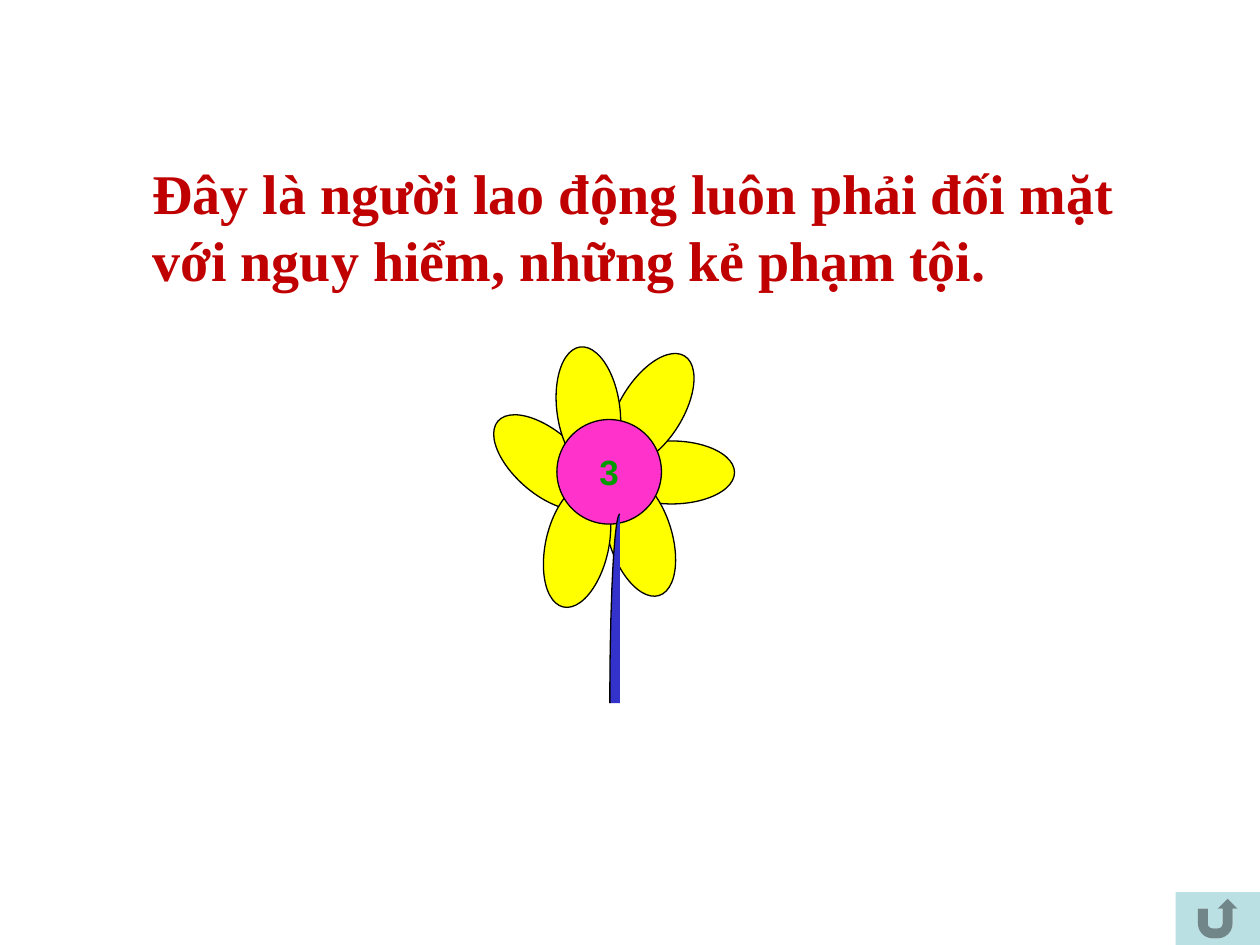
import math

import pptx
import pptx.dml.color
import pptx.enum.shapes
import pptx.enum.text
import pptx.util
from pptx.util import Inches

RGBColor = pptx.dml.color.RGBColor
MSO_SHAPE = pptx.enum.shapes.MSO_SHAPE

BLACK = RGBColor(0x00, 0x00, 0x00)
CLUE_RED = RGBColor(0xC0, 0x00, 0x00)
PETAL_YELLOW = RGBColor(0xFF, 0xFF, 0x00)
CENTRE_PINK = RGBColor(0xFF, 0x33, 0xCC)
NUMBER_GREEN = RGBColor(0x00, 0x99, 0x00)
STEM_BLUE = RGBColor(0x33, 0x33, 0xCC)
BUTTON_BLUE = RGBColor(0xBB, 0xE0, 0xE3)


def paint(shape, fill=None, line=None):
    shape.shadow.inherit = False
    if fill is None:
        shape.fill.background()
    else:
        shape.fill.solid()
        shape.fill.fore_color.rgb = fill
    if line is None:
        shape.line.fill.background()
    else:
        shape.line.color.rgb = line
        shape.line.width = pptx.util.Pt(0.75)


def format_run(run, font_name, size, color):
    run.font.name = font_name
    run.font.size = pptx.util.Pt(size)
    run.font.bold = True
    run.font.color.rgb = color


presentation = pptx.Presentation()
presentation.slide_width = Inches(10)
presentation.slide_height = Inches(7.5)
slide = presentation.slides.add_slide(presentation.slide_layouts[6])
shapes = slide.shapes

# Clue
clue = shapes.add_textbox(Inches(1.11), Inches(1.21), Inches(8.06), Inches(1.18))
clue.text_frame.word_wrap = True
clue.text_frame.auto_size = pptx.enum.text.MSO_AUTO_SIZE.SHAPE_TO_FIT_TEXT
clue.text_frame.text = (
    "Đây là người lao động luôn phải đối mặt với nguy hiểm, những kẻ phạm tội."
)
format_run(clue.text_frame.paragraphs[0].runs[0], "Times New Roman", 32, CLUE_RED)

# Petals: left, top, width, height, rotation
petals = [
    (4.08, 3.17, 0.5, 1, 310.9),
    (4.83, 3.5, 1, 0.5, 0),
    (4.67, 3, 1, 0.5, 301.8),
    (4.83, 3.75, 0.5, 1, 342.3),
    (4.42, 2.75, 0.5, 1, 352.4),
    (4.33, 3.83, 0.5, 1, 12.6),
]
for left, top, width, height, rotation in petals:
    petal = shapes.add_shape(
        MSO_SHAPE.OVAL, Inches(left), Inches(top), Inches(width), Inches(height)
    )
    petal.rotation = rotation
    paint(petal, PETAL_YELLOW, BLACK)

# Numbered flower centre
centre = shapes.add_shape(
    MSO_SHAPE.OVAL, Inches(4.42), Inches(3.33), Inches(0.83), Inches(0.83)
)
paint(centre, CENTRE_PINK, BLACK)
centre.text_frame.word_wrap = False
centre.text_frame.vertical_anchor = pptx.enum.text.MSO_ANCHOR.MIDDLE
centre.text_frame.text = "3"
number = centre.text_frame.paragraphs[0]
number.alignment = pptx.enum.text.PP_ALIGN.CENTER
format_run(number.runs[0], "Arial", 20, NUMBER_GREEN)

# Stem: a filled quarter ellipse with a line along its curved edge only
stem_right, stem_bottom = 4.92, 5.58
stem_width, stem_height = 0.08, 1.5
steps = 24
curve = []
for step in range(steps + 1):
    angle = math.pi / 2 * step / steps
    curve.append((
        Inches(stem_right - stem_width * math.sin(angle)),
        Inches(stem_bottom - stem_height * math.cos(angle)),
    ))
stem_corner = (Inches(stem_right), Inches(stem_bottom))
for points, closed, fill, line in [
    (curve + [stem_corner], True, STEM_BLUE, None),
    (curve, False, None, BLACK),
]:
    builder = shapes.build_freeform(*points[0])
    builder.add_line_segments(points[1:], close=closed)
    paint(builder.convert_to_shape(), fill, line)

# Return button in the bottom right corner
return_button = shapes.add_shape(
    MSO_SHAPE.ACTION_BUTTON_RETURN,
    Inches(9.33), Inches(7.08), Inches(0.67), Inches(0.42),
)
paint(return_button, BUTTON_BLUE)

presentation.save("out.pptx")
